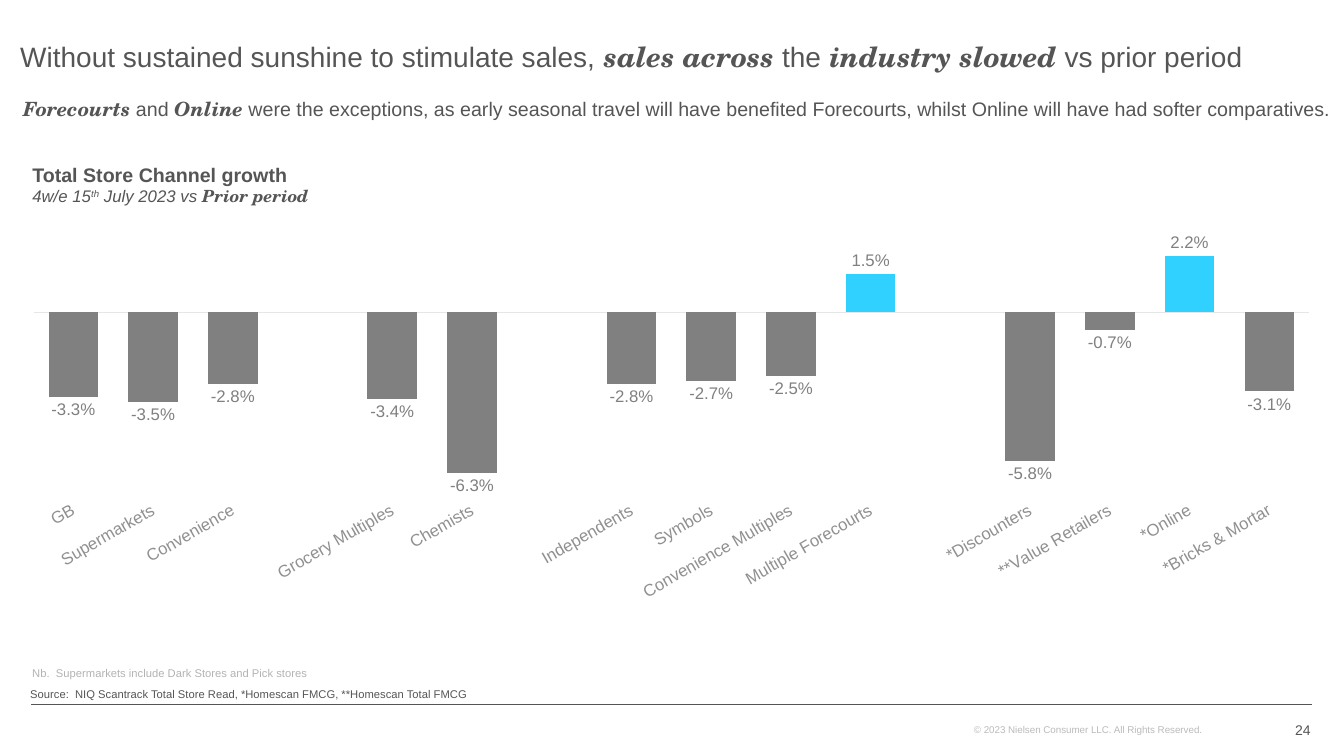
"""Build the channel growth slide with its column chart and footnotes."""
from dataclasses import dataclass

from lxml.etree import SubElement
from pptx import Presentation
from pptx.chart.data import CategoryChartData
from pptx.dml.color import RGBColor
from pptx.enum.chart import XL_CHART_TYPE as ChartType
from pptx.enum.chart import XL_LABEL_POSITION as LabelPosition
from pptx.enum.chart import XL_TICK_LABEL_POSITION as TickLabels
from pptx.enum.chart import XL_TICK_MARK as TickMark
from pptx.enum.shapes import MSO_CONNECTOR as Connector
from pptx.enum.text import MSO_ANCHOR as Anchor
from pptx.enum.text import MSO_AUTO_SIZE as AutoSize
from pptx.enum.text import PP_ALIGN as Align
from pptx.oxml import parse_xml
from pptx.oxml.ns import nsdecls, qn
from pptx.util import Inches, Pt


@dataclass(frozen=True)
class Theme:
    """Colours, fonts and type sizes of the slide."""
    sans: str = "Arial"
    serif: str = "TeX Gyre Schola"
    ink: str = "555555"
    note: str = "B3B3B3"
    copyright: str = "BBBBBB"
    category: str = "909090"
    axis: str = "E6E6E6"
    decline: str = "808080"
    growth: str = "30D1FF"
    title_size: int = 20
    heading_size: int = 14
    label_size: int = 12
    number_size: int = 10
    footnote_size: int = 8
    copyright_size: int = 7


THEME = Theme()


@dataclass(frozen=True)
class Phrase:
    """A stretch of text in one style."""
    text: str
    size: int
    colour: str = THEME.ink
    font: str = THEME.sans
    bold: bool = False
    italic: bool = False
    superscript: bool = False
    break_after: bool = False


@dataclass(frozen=True)
class Block:
    """A text area given in inches, with its phrases."""
    left: float
    top: float
    width: float
    height: float
    phrases: tuple[Phrase, ...]
    anchor: Anchor = Anchor.TOP
    align: Align = Align.LEFT
    space_after: int = 0


def accent(text: str, size: int) -> Phrase:
    """Return a phrase in the bold italic serif used for emphasis."""
    return Phrase(text, size, font=THEME.serif, bold=True, italic=True)


TITLE = Block(0.2, 0.34, 13.13, 0.43, (
    Phrase("Without sustained sunshine to stimulate sales, ", THEME.title_size),
    accent("sales across ", THEME.title_size),
    Phrase("the", THEME.title_size),
    accent(" industry slowed ", THEME.title_size),
    Phrase("vs prior period", THEME.title_size),
), Anchor.MIDDLE)

BLOCKS = (
    Block(0.23, 0.84, 13.1, 0.48, (
        accent("Forecourts", THEME.heading_size),
        Phrase(" and ", THEME.heading_size),
        accent("Online", THEME.heading_size),
        Phrase(" were the exceptions, as early seasonal travel will have benefited "
               "Forecourts, whilst Online will have had softer comparatives.",
               THEME.heading_size),
    ), Anchor.MIDDLE, space_after=6),
    Block(0.32, 1.56, 4.78, 0.54, (
        Phrase("Total Store Channel growth", THEME.heading_size, bold=True,
               break_after=True),
        Phrase("4w/e 15", THEME.label_size, italic=True),
        Phrase("th", THEME.label_size, italic=True, superscript=True),
        Phrase(" July 2023 vs ", THEME.label_size, italic=True),
        accent("Prior period", THEME.label_size),
    ), Anchor.MIDDLE),
    Block(0.32, 6.55, 2.96, 0.24, (
        Phrase("Nb.  Supermarkets include Dark Stores and Pick stores",
               THEME.footnote_size, THEME.note),
    ), Anchor.BOTTOM),
    Block(0.3, 6.77, 12.67, 0.48, (
        Phrase("Source:  NIQ Scantrack Total Store Read, *Homescan FMCG, "
               "**Homescan Total FMCG", THEME.footnote_size),
    )),
    Block(9.66, 7.13, 2.84, 0.22, (
        Phrase("© 2023 Nielsen Consumer LLC. All Rights Reserved.",
               THEME.copyright_size, THEME.copyright),
    )),
    Block(12.01, 7.04, 0.99, 0.4, (Phrase("24", THEME.number_size),),
          Anchor.MIDDLE, Align.RIGHT),
)

GAP = ("", None)
CHANNELS = (
    ("GB", -0.033), ("Supermarkets", -0.035), ("Convenience", -0.028), GAP,
    ("Grocery Multiples", -0.034), ("Chemists", -0.063), GAP,
    ("Independents", -0.028), ("Symbols", -0.027),
    ("Convenience Multiples", -0.025), ("Multiple Forecourts", 0.015), GAP,
    ("*Discounters", -0.058), ("**Value Retailers", -0.007),
    ("*Online", 0.022), ("*Bricks & Mortar", -0.031),
)


def style_font(font, size: int, colour: str, name: str = THEME.sans) -> None:
    """Set the size, colour and typeface of a font."""
    font.size = Pt(size)
    font.name = name
    font.color.rgb = RGBColor.from_string(colour)


def fill_block(shape, block: Block) -> None:
    """Place a text shape and write the phrases of its block."""
    shape.left, shape.top = Inches(block.left), Inches(block.top)
    shape.width, shape.height = Inches(block.width), Inches(block.height)
    frame = shape.text_frame
    frame.word_wrap = True
    frame.auto_size = AutoSize.NONE
    frame.vertical_anchor = block.anchor
    frame.margin_left = frame.margin_right = Inches(0)
    frame.margin_top = frame.margin_bottom = Inches(0.05)
    paragraph = frame.paragraphs[0]
    paragraph.alignment = block.align
    paragraph.space_after = Pt(block.space_after)
    for phrase in block.phrases:
        run = paragraph.add_run()
        run.text = phrase.text
        style_font(run.font, phrase.size, phrase.colour, phrase.font)
        run.font.bold, run.font.italic = phrase.bold, phrase.italic
        if phrase.superscript:
            run.font._element.set("baseline", "30000")
        if phrase.break_after:
            paragraph.add_line_break()


def add_growth_chart(slide) -> None:
    """Add the column chart of growth by channel."""
    growth_data = CategoryChartData(number_format="0.0%")
    growth_data.categories = [name for name, _ in CHANNELS]
    growth_data.add_series("Series 1", [growth for _, growth in CHANNELS])
    chart = slide.shapes.add_chart(
        ChartType.COLUMN_CLUSTERED, Inches(0.32), Inches(2.11),
        Inches(12.67), Inches(4.34), growth_data).chart
    chart.has_title = chart.has_legend = False
    style_font(chart.font, THEME.number_size, THEME.ink)

    channels = chart.category_axis
    channels.tick_label_position = TickLabels.LOW
    channels.major_tick_mark = channels.minor_tick_mark = TickMark.NONE
    channels.has_major_gridlines = False
    channels.format.line.color.rgb = RGBColor.from_string(THEME.axis)
    channels.format.line.width = Pt(0.75)
    style_font(channels.tick_labels.font, THEME.label_size, THEME.category)
    label_body = channels._element.find(qn("c:txPr")).find(qn("a:bodyPr"))
    label_body.set("rot", "-1800000")
    label_body.set("vert", "horz")

    rates = chart.value_axis
    rates.minimum_scale, rates.maximum_scale = -0.07, 0.03
    rates.has_major_gridlines = rates.visible = False

    plot = chart.plots[0]
    plot.gap_width, plot.overlap = 61, -30
    plot.vary_by_categories = False
    plot.has_data_labels = True
    labels = plot.data_labels
    labels.show_value = True
    labels.position = LabelPosition.OUTSIDE_END
    labels.number_format, labels.number_format_is_linked = "0.0%", False
    style_font(labels.font, THEME.label_size, THEME.decline)

    columns = plot.series[0]
    columns.invert_if_negative = False
    columns.format.fill.solid()
    columns.format.fill.fore_color.rgb = RGBColor.from_string(THEME.decline)
    for index, (_, growth) in enumerate(CHANNELS):
        if growth and growth > 0:
            fill = columns.points[index].format.fill
            fill.solid()
            fill.fore_color.rgb = RGBColor.from_string(THEME.growth)

    plot_area = chart._chartSpace.find(qn("c:chart")).find(qn("c:plotArea"))
    for layout in plot_area.findall(qn("c:layout")):
        plot_area.remove(layout)
    plot_area.insert(0, parse_xml(
        f'<c:layout {nsdecls("c")}><c:manualLayout><c:layoutTarget val="inner"/>'
        '<c:xMode val="edge"/><c:yMode val="edge"/><c:x val="0.001"/>'
        '<c:y val="0.052"/><c:w val="0.999"/><c:h val="0.585"/>'
        '</c:manualLayout></c:layout>'))


def add_footer_rule(slide) -> None:
    """Draw the line above the footer."""
    rule = slide.shapes.add_connector(
        Connector.STRAIGHT, Inches(0.31), Inches(6.99), Inches(13.01), Inches(6.99))
    rule.line.color.rgb = RGBColor.from_string(THEME.ink)
    rule.line.width = Pt(1)
    SubElement(rule._element.spPr, qn("a:effectLst"))


def main() -> None:
    """Build and save the presentation."""
    deck = Presentation()
    deck.slide_width, deck.slide_height = Inches(13.33), Inches(7.5)
    slide = deck.slides.add_slide(deck.slide_layouts[5])
    add_footer_rule(slide)
    fill_block(slide.shapes.title, TITLE)
    add_growth_chart(slide)
    for block in BLOCKS:
        fill_block(slide.shapes.add_textbox(0, 0, 0, 0), block)
    deck.save("out.pptx")


if __name__ == "__main__":
    main()
